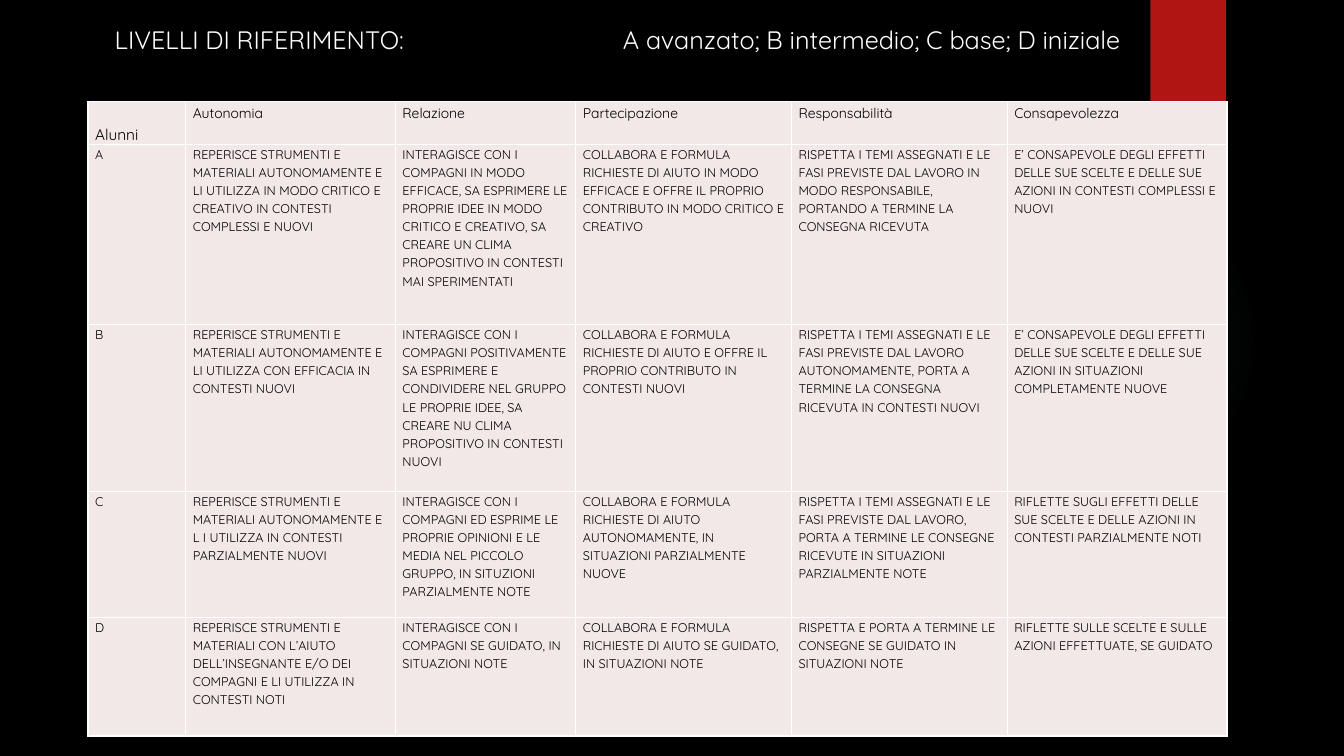
from lxml import etree
from pptx import Presentation
from pptx.dml.color import RGBColor
from pptx.enum import shapes, text
from pptx.oxml import parse_xml
from pptx.oxml.ns import qn
from pptx.util import Pt

NS = 'xmlns:a="http://schemas.openxmlformats.org/drawingml/2006/main"'


def paint(fill, tone):
    fill.solid()
    fill.fore_color.rgb = RGBColor.from_string(tone)


def style(para, size, tone):
    for key, val in {"name": "Quicksand", "size": Pt(size), "bold": False}.items():
        setattr(para.font, key, val)
    para.font.color.rgb = RGBColor.from_string(tone)


deck = Presentation()
deck.slide_width, deck.slide_height = Pt(960), Pt(540)
slide = deck.slides.add_slide(deck.slide_layouts[6])
paint(slide.background.fill, "000000")

# Faint teal glow
glow = slide.shapes.add_shape(shapes.MSO_SHAPE.OVAL, Pt(677.5), Pt(131.8), Pt(221.8), Pt(221.8))
glow.shadow.inherit = False
glow.line.fill.background()
stops = "".join(
    f'<a:gs pos="{pos * 1000}"><a:srgbClr val="50B9C1"><a:alpha val="{alpha * 1000}"/></a:srgbClr></a:gs>'
    for pos, alpha in [(0, 7), (36, 6), (69, 0)])
glow._element.spPr.find(qn("a:prstGeom")).addnext(parse_xml(
    f'<a:gradFill {NS}><a:gsLst>{stops}</a:gsLst><a:path path="circle">'
    '<a:fillToRect l="50000" t="50000" r="50000" b="50000"/></a:path></a:gradFill>'))

# Red tab
tab = slide.shapes.add_shape(shapes.MSO_SHAPE.RECTANGLE, Pt(821.8), 0, Pt(54), Pt(90))
tab.shadow.inherit = False
tab.line.fill.background()
paint(tab.fill, "B01513")

# Levels table
rows = [
    ["Alunni", "Autonomia", "Relazione", "Partecipazione", "Responsabilità", "Consapevolezza"],
    ["A",
     "REPERISCE STRUMENTI E MATERIALI AUTONOMAMENTE E LI UTILIZZA IN MODO CRITICO E CREATIVO IN CONTESTI COMPLESSI E NUOVI",
     "INTERAGISCE CON I COMPAGNI IN MODO EFFICACE, SA ESPRIMERE LE PROPRIE IDEE IN MODO CRITICO E CREATIVO, SA CREARE UN CLIMA PROPOSITIVO IN CONTESTI MAI SPERIMENTATI",
     "COLLABORA E FORMULA RICHIESTE DI AIUTO IN MODO EFFICACE E OFFRE IL PROPRIO CONTRIBUTO IN MODO CRITICO E CREATIVO",
     "RISPETTA I TEMI ASSEGNATI E LE FASI PREVISTE DAL LAVORO IN MODO RESPONSABILE, PORTANDO A TERMINE LA CONSEGNA RICEVUTA",
     "E’ CONSAPEVOLE DEGLI EFFETTI DELLE SUE SCELTE E DELLE SUE AZIONI IN CONTESTI COMPLESSI E NUOVI"],
    ["B",
     "REPERISCE STRUMENTI E MATERIALI AUTONOMAMENTE E LI UTILIZZA CON EFFICACIA IN CONTESTI NUOVI",
     "INTERAGISCE CON I COMPAGNI POSITIVAMENTE SA ESPRIMERE E CONDIVIDERE NEL GRUPPO LE PROPRIE IDEE, SA CREARE NU CLIMA PROPOSITIVO IN CONTESTI NUOVI",
     "COLLABORA E FORMULA RICHIESTE DI AIUTO E OFFRE IL PROPRIO CONTRIBUTO IN CONTESTI NUOVI",
     "RISPETTA I TEMI ASSEGNATI E LE FASI PREVISTE DAL LAVORO AUTONOMAMENTE, PORTA A TERMINE LA CONSEGNA RICEVUTA IN CONTESTI NUOVI",
     "E’ CONSAPEVOLE DEGLI EFFETTI DELLE SUE SCELTE E DELLE SUE AZIONI IN SITUAZIONI COMPLETAMENTE NUOVE"],
    ["C",
     "REPERISCE STRUMENTI E MATERIALI AUTONOMAMENTE E L I UTILIZZA IN CONTESTI PARZIALMENTE NUOVI",
     "INTERAGISCE CON I COMPAGNI ED ESPRIME LE PROPRIE OPINIONI E LE MEDIA NEL PICCOLO GRUPPO, IN SITUZIONI PARZIALMENTE NOTE",
     "COLLABORA E FORMULA RICHIESTE DI AIUTO AUTONOMAMENTE, IN SITUAZIONI PARZIALMENTE NUOVE",
     "RISPETTA I TEMI ASSEGNATI E LE FASI PREVISTE DAL LAVORO, PORTA A TERMINE LE CONSEGNE RICEVUTE IN SITUAZIONI PARZIALMENTE NOTE",
     "RIFLETTE SUGLI EFFETTI DELLE SUE SCELTE E DELLE AZIONI IN CONTESTI PARZIALMENTE NOTI"],
    ["D",
     "REPERISCE STRUMENTI E MATERIALI CON L’AIUTO DELL’INSEGNANTE E/O DEI COMPAGNI E LI UTILIZZA IN CONTESTI NOTI",
     "INTERAGISCE CON I COMPAGNI SE GUIDATO, IN SITUAZIONI NOTE",
     "COLLABORA E FORMULA RICHIESTE DI AIUTO SE GUIDATO, IN SITUAZIONI NOTE",
     "RISPETTA E PORTA A TERMINE LE CONSEGNE SE GUIDATO IN SITUAZIONI NOTE",
     "RIFLETTE SULLE SCELTE E SULLE AZIONI EFFETTUATE, SE GUIDATO"],
]
widths = [69.84, 149.76, 128.88, 154.08, 154.08, 156.96]
heights = [30.24, 128.88, 119, 90, 85]
grid = slide.shapes.add_table(
    len(rows), len(widths), Pt(62.9), Pt(72.7), Pt(sum(widths)), Pt(sum(heights))).table
grid.horz_banding = False
for col, width in zip(grid.columns, widths):
    col.width = Pt(width)
for row, height in zip(grid.rows, heights):
    row.height = Pt(height)

insets = {"margin_left": Pt(5.04), "margin_right": Pt(5.04), "margin_top": 0, "margin_bottom": 0}
for r, row in enumerate(rows):
    for c, words in enumerate(row):
        cell = grid.cell(r, c)
        for key, val in insets.items():
            setattr(cell, key, val)
        props = cell._tc.get_or_add_tcPr()
        for side in "LRTB":
            edge = etree.SubElement(props, qn(f"a:ln{side}"), w=str(Pt(1)))
            ink = etree.SubElement(edge, qn("a:solidFill"))
            etree.SubElement(ink, qn("a:srgbClr"), val="FFFFFF")
        paint(cell.fill, "F2E8E7")
        cell.text = words
        para = cell.text_frame.paragraphs[0]
        para.line_spacing, para.space_after = 1.15, Pt(10)
        style(para, 9 if r else 10 if c else 11, "000000")
grid.cell(0, 0).vertical_anchor = text.MSO_ANCHOR.BOTTOM

# Title line, split by a tab stop
box = slide.shapes.add_textbox(Pt(74.9), Pt(13.7), Pt(787.7), Pt(29))
box.text_frame.word_wrap = True
title = box.text_frame.paragraphs[0]
title.text = "LIVELLI DI RIFERIMENTO:\tA avanzato; B intermedio; C base; D iniziale"
tabs = etree.SubElement(title._p.get_or_add_pPr(), qn("a:tabLst"))
etree.SubElement(tabs, qn("a:tab"), pos=str(Pt(363)), algn="l")
style(title, 18, "FFFFFF")

deck.save("out.pptx")
